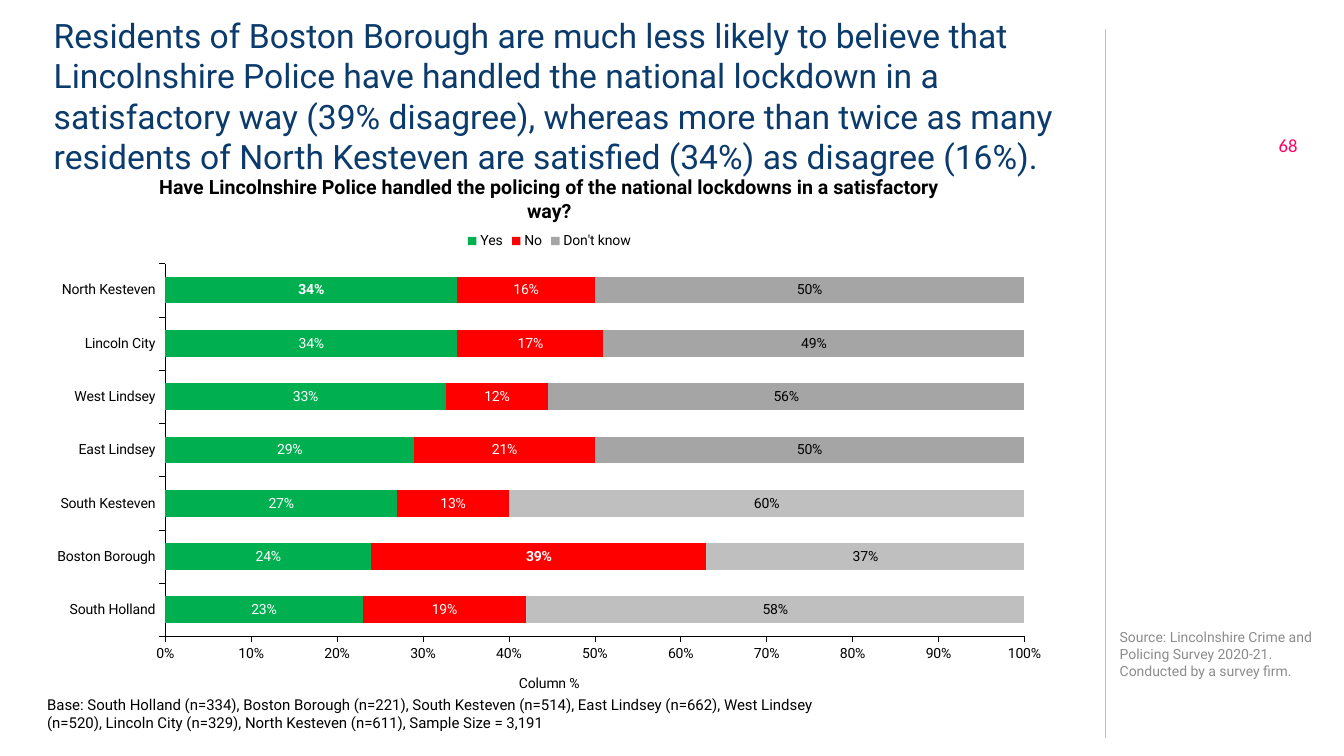
from lxml import etree
from pptx import Presentation
from pptx import util as u
from pptx.chart import data as chart_data
from pptx.dml.color import RGBColor
from pptx.enum import chart as charts, shapes, text
from pptx.oxml import parse_xml
from pptx.oxml.ns import nsdecls, qn

# Content
HEADLINE = (
    "Residents of Boston Borough are much less likely to believe that Lincolnshire Police "
    "have handled the national lockdown in a satisfactory way (39% disagree), whereas more "
    "than twice as many residents of North Kesteven are satisfied (34%) as disagree (16%)."
)
QUESTION = (
    "Have Lincolnshire Police handled the policing of the national lockdowns "
    "in a satisfactory way?"
)
BASE = (
    "Base: South Holland (n=334), Boston Borough (n=221), South Kesteven (n=514), "
    "East Lindsey (n=662), West Lindsey (n=520), Lincoln City (n=329), "
    "North Kesteven (n=611), Sample Size = 3,191"
)
SOURCE = "Source: Lincolnshire Crime and Policing Survey 2020-21. Conducted by a survey firm."
PAGE = "68"
AXIS_TITLE = "Column %"
DISTRICTS = ["South Holland", "Boston Borough", "South Kesteven", "East Lindsey",
             "West Lindsey", "Lincoln City", "North Kesteven"]
ANSWERS = {
    "Yes": [0.23, 0.24, 0.27, 0.29, 0.33, 0.34, 0.34],
    "No": [0.19, 0.39, 0.13, 0.21, 0.12, 0.17, 0.16],
    "Don't know": [0.58, 0.37, 0.60, 0.50, 0.56, 0.49, 0.50],
}
BOLD_LABELS = {"Yes": "North Kesteven", "No": "Boston Borough"}
PALE_DISTRICTS = {"Don't know": DISTRICTS[:3]}

THEME = {
    "font": "Roboto", "page_font": "Calibri",
    "headline": "0B3B6C", "ink": "000000", "muted": "8C8C8C", "page": "FF0066",
    "rule": "BFBFBF", "pale": "BFBFBF", "label": "FFFFFF",
    "bars": {"Yes": "00B050", "No": "FF0000", "Don't know": "A5A5A5"},
    "headline_size": 24, "question_size": 14, "base_size": 10.7,
    "small_size": 10, "page_size": 13.3,
}

# Layout in points: left, top, width, height
HEADLINE_BOX = (28.8, 5.8, 753.8, 81.4)
QUESTION_BOX = (104.4, 121.7, 576, 41)
CHART_BOX = (26.6, 158.4, 731.5, 351.4)
BASE_BOX = (26.6, 493.2, 576, 33.1)
SOURCE_BOX = (792.7, 429.1, 167, 75.6)
PAGE_BOX = (823, 88.6, 110.9, 30.2)
RULE_X, RULE_TOP, RULE_BOTTOM = 789.8, 20.9, 527
PLOT = {"x": 0.125, "y": 0.085, "w": 0.839, "h": 0.758}  # share of the chart box


def points(values):
    return [u.Pt(value) for value in values]


def style_font(font, size, color, name=THEME["font"], bold=False):
    font.size, font.name, font.bold = u.Pt(size), name, bold
    font.color.rgb = RGBColor.from_string(color)


def add_text(slide, box, words, size, color, name=THEME["font"], bold=False,
             align=text.PP_ALIGN.LEFT, anchor=text.MSO_ANCHOR.TOP, insets=(7.2, 3.6)):
    frame = slide.shapes.add_textbox(*points(box)).text_frame
    frame.word_wrap = True
    frame.vertical_anchor = anchor
    frame.margin_left = frame.margin_right = u.Pt(insets[0])
    frame.margin_top = frame.margin_bottom = u.Pt(insets[1])
    frame.text = words
    paragraph = frame.paragraphs[0]
    paragraph.alignment = align
    style_font(paragraph.runs[0].font, size, color, name, bold)


def style_axis(axis):
    axis.has_major_gridlines = False
    axis.major_tick_mark = charts.XL_TICK_MARK.OUTSIDE
    axis.minor_tick_mark = charts.XL_TICK_MARK.NONE
    axis.format.line.width = u.Pt(0.31)
    axis.format.line.color.rgb = RGBColor.from_string(THEME["ink"])


def style_series(series):
    name, size = series.name, THEME["small_size"]
    series.format.fill.solid()
    series.format.fill.fore_color.rgb = RGBColor.from_string(THEME["bars"][name])
    color = THEME["ink"] if name == "Don't know" else THEME["label"]
    labels = series.data_labels
    labels.show_value = True
    labels.number_format, labels.number_format_is_linked = "0%", False
    style_font(labels.font, size, color)
    for index, district in enumerate(DISTRICTS):
        if district in PALE_DISTRICTS.get(name, []):
            fill = series.points[index].format.fill
            fill.solid()
            fill.fore_color.rgb = RGBColor.from_string(THEME["pale"])
        if district == BOLD_LABELS.get(name):
            style_font(series.points[index].data_label.font, size, color, bold=True)


def fix_plot_area(chart):
    plot_area = chart.plots[0]._element.getparent()
    for old in plot_area.findall(qn("c:layout")):
        plot_area.remove(old)
    layout = parse_xml(f"<c:layout {nsdecls('c')}><c:manualLayout/></c:layout>")
    settings = {"layoutTarget": "inner", "xMode": "edge", "yMode": "edge", **PLOT}
    for tag, value in settings.items():
        etree.SubElement(layout[0], qn(f"c:{tag}")).set("val", str(value))
    plot_area.insert(0, layout)


def add_survey_chart(slide):
    data = chart_data.CategoryChartData(number_format="0%")
    data.categories = DISTRICTS
    for answer, shares in ANSWERS.items():
        data.add_series(answer, shares)
    chart = slide.shapes.add_chart(
        charts.XL_CHART_TYPE.BAR_STACKED_100, *points(CHART_BOX), data).chart
    style_font(chart.font, THEME["small_size"], THEME["ink"])
    chart.has_title = False
    chart.has_legend = True
    chart.legend.position = charts.XL_LEGEND_POSITION.TOP
    chart.legend.include_in_layout = False

    plot = chart.plots[0]
    plot.gap_width, plot.overlap, plot.vary_by_categories = 100, 100, False
    for series in plot.series:
        style_series(series)

    style_axis(chart.category_axis)
    axis = chart.value_axis
    style_axis(axis)
    axis.minimum_scale, axis.maximum_scale, axis.major_unit = 0, 1, 0.1
    axis.tick_labels.number_format = "0%"
    axis.tick_labels.number_format_is_linked = False
    axis.axis_title.text_frame.text = AXIS_TITLE
    title_run = axis.axis_title.text_frame.paragraphs[0].runs[0]
    style_font(title_run.font, THEME["small_size"], THEME["ink"])
    fix_plot_area(chart)


def main():
    presentation = Presentation()
    presentation.slide_width, presentation.slide_height = u.Pt(960), u.Pt(540)
    slide = presentation.slides.add_slide(presentation.slide_layouts[6])

    # Side column
    rule = slide.shapes.add_connector(
        shapes.MSO_CONNECTOR.STRAIGHT, *points((RULE_X, RULE_TOP, RULE_X, RULE_BOTTOM)))
    rule.line.width = u.Pt(1)
    rule.line.color.rgb = RGBColor.from_string(THEME["rule"])
    etree.SubElement(rule._element.spPr, qn("a:effectLst"))
    add_text(slide, SOURCE_BOX, SOURCE, THEME["small_size"], THEME["muted"],
             anchor=text.MSO_ANCHOR.MIDDLE)
    add_text(slide, PAGE_BOX, PAGE, THEME["page_size"], THEME["page"], THEME["page_font"],
             align=text.PP_ALIGN.RIGHT, anchor=text.MSO_ANCHOR.MIDDLE)

    # Question, chart and base
    add_text(slide, QUESTION_BOX, QUESTION, THEME["question_size"], THEME["ink"],
             bold=True, align=text.PP_ALIGN.CENTER)
    add_survey_chart(slide)
    add_text(slide, BASE_BOX, BASE, THEME["base_size"], THEME["ink"])

    # Headline
    add_text(slide, HEADLINE_BOX, HEADLINE, THEME["headline_size"], THEME["headline"],
             insets=(9.6, 4.8))

    presentation.save("out.pptx")


if __name__ == "__main__":
    main()
